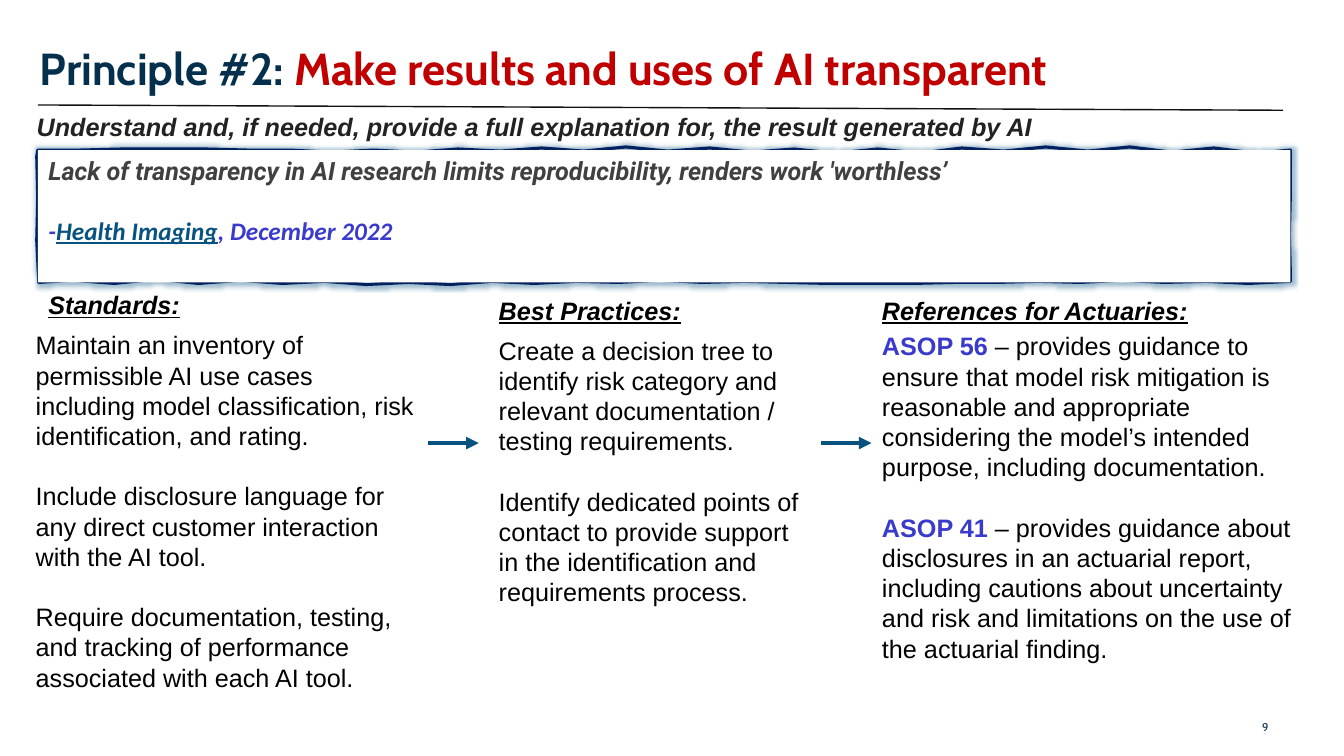
import math

import pptx
import pptx.dml.color
import pptx.enum.shapes
import pptx.enum.text
import pptx.oxml
import pptx.oxml.ns
import pptx.util

RGBColor = pptx.dml.color.RGBColor
ALIGN = pptx.enum.text.PP_ALIGN
ANCHOR = pptx.enum.text.MSO_ANCHOR

PX = 9525  # EMU in one px, 96 px to the inch
WHITE = RGBColor(0xFF, 0xFF, 0xFF)
BLACK = RGBColor(0, 0, 0)
NAVY = RGBColor(0x05, 0x30, 0x4D)
RED = RGBColor(0xC0, 0, 0)
RULE = RGBColor(0x12, 0x12, 0x12)
INK = RGBColor(0x22, 0x22, 0x22)
GREY = RGBColor(0x40, 0x40, 0x40)
FRAME = RGBColor(0x00, 0x20, 0x60)
TEAL = RGBColor(0x08, 0x52, 0x80)
VIOLET = RGBColor(0x3A, 0x3A, 0xCC)
NS = pptx.oxml.ns.nsdecls("a")


def add_run(p, text, size=18, font="Arial", color=BLACK, bold=False,
            italic=False, underline=False):
    r = p.add_run()
    r.text = text
    r.font.size = pptx.util.Pt(size)
    r.font.name = font
    r.font.color.rgb = color
    r.font.bold, r.font.italic, r.font.underline = bold, italic, underline


def fill_frame(tf, paragraphs, align=ALIGN.LEFT, anchor=ANCHOR.TOP, inset=(10, 5),
               wrap=True, gap=0, spacing=None):
    """Each paragraph is a list of (text, format) runs."""
    tf.word_wrap = wrap
    tf.vertical_anchor = anchor
    tf.margin_left = tf.margin_right = inset[0] * PX
    tf.margin_top = tf.margin_bottom = inset[1] * PX
    for i, runs in enumerate(paragraphs):
        p = tf.paragraphs[0] if i == 0 else tf.add_paragraph()
        p.alignment = align
        if i and gap:
            p.space_before = pptx.util.Pt(gap)
        if spacing:
            p.line_spacing = spacing
        for text, fmt in runs:
            add_run(p, text, **fmt)


def add_text(slide, box, paragraphs, **layout):
    sp = slide.shapes.add_textbox(*(v * PX for v in box))
    fill_frame(sp.text_frame, paragraphs, **layout)


def add_line(slide, x1, y1, x2, y2, color, width, arrow=False):
    ln = slide.shapes.add_connector(
        pptx.enum.shapes.MSO_CONNECTOR.STRAIGHT, x1 * PX, y1 * PX, x2 * PX, y2 * PX)
    ln.line.color.rgb = color
    ln.line.width = pptx.util.Pt(width)
    if arrow:
        ln.line._get_or_add_ln().append(
            pptx.oxml.parse_xml(f'<a:tailEnd {NS} type="triangle"/>'))
    ln._element.spPr.append(pptx.oxml.parse_xml(f"<a:effectLst {NS}/>"))


def add_wavy_edge(slide, box):
    """Rectangle with hand-drawn edges, walked clockwise in even steps."""
    x, y, w, h = box
    step = 40

    def wave(t):
        return 2 * math.sin(t / 13) + math.sin(t / 7)

    across, down = range(0, w, step), range(0, h, step)
    points = [(x + t, y + wave(t)) for t in across]
    points += [(x + w + wave(t) / 2, y + t) for t in down]
    points += [(x + w - t, y + h + wave(t + 50)) for t in across]
    points += [(x + wave(t + 90) / 2, y + h - t) for t in down]
    fb = slide.shapes.build_freeform(*points[0], scale=PX)
    fb.add_line_segments(points[1:], close=True)
    sp = fb.convert_to_shape()
    sp.shadow.inherit = False
    return sp


def add_header(slide, box):
    x, y, w, h = box
    title = dict(size=32, font="Cabin", bold=True)
    add_text(slide, (x + 2, y, w, 42),
             [[("Principle #2: ", dict(title, color=NAVY)),
               ("Make results and uses of AI transparent", dict(title, color=RED))]],
             inset=(0, 0), spacing=0.8)
    add_line(slide, x, y + 51, x + 1186, y + 56, RULE, 1)
    add_text(slide, (x - 11, y + 52, 977, 38),
             [[("Understand and, if needed, provide a full explanation for, "
                "the result generated by AI",
                dict(color=INK, bold=True, italic=True))]], wrap=False)


def add_quote(slide, box):
    # Stroke with a soft glow
    edge = add_wavy_edge(slide, box)
    edge.fill.background()
    edge.line.color.rgb = FRAME
    edge.line.width = pptx.util.Pt(2.25)
    edge._element.spPr.find(pptx.oxml.ns.qn("a:effectLst")).append(pptx.oxml.parse_xml(
        f'<a:glow {NS} rad="63500"><a:srgbClr val="{TEAL}">'
        '<a:alpha val="40000"/></a:srgbClr></a:glow>'))

    # White paper that holds the text
    paper = slide.shapes.add_shape(
        pptx.enum.shapes.MSO_SHAPE.RECTANGLE, *(v * PX for v in box))
    paper.shadow.inherit = False
    paper.fill.solid()
    paper.fill.fore_color.rgb = WHITE
    paper.line.fill.background()
    bold = dict(bold=True, italic=True)
    source = dict(bold, font="Calibri", color=VIOLET)
    fill_frame(paper.text_frame, [
        [("Lack of transparency in AI research limits reproducibility, "
          "renders work 'worthless’", dict(bold, font="Roboto", color=GREY))],
        [("-", source),
         ("Health Imaging", dict(source, color=TEAL, underline=True)),
         (", December 2022", source)],
    ], gap=21)


def add_column(slide, box, heading, heading_offset, paragraphs):
    x, y, w, h = box
    dx, dy = heading_offset
    add_text(slide, (x + dx, y + dy, w - dx, 38),
             [[(heading, dict(bold=True, italic=True, underline=True))]])
    add_text(slide, box, paragraphs, gap=21.5)


def build_slide(prs):
    slide = prs.slides.add_slide(prs.slide_layouts[6])
    add_header(slide, (36, 49, 1125, 90))
    add_quote(slide, (36, 143, 1193, 126))

    # Three columns
    add_column(slide, (24, 309, 384, 359), "Standards:", (12, -38), [
        [("Maintain an inventory of permissible AI use cases including model "
          "classification, risk identification, and rating.", {})],
        [("Include disclosure language for any direct customer interaction "
          "with the AI tool.", {})],
        [("Require documentation, testing, and tracking of performance "
          "associated with each AI tool.", {})]])
    add_column(slide, (465, 314, 319, 272), "Best Practices:", (0, -38), [
        [("Create a decision tree to identify risk category and relevant "
          "documentation / testing requirements.", {})],
        [("Identify dedicated points of contact to provide support in the "
          "identification and requirements process.", {})]])
    asop = dict(color=VIOLET, bold=True)
    add_column(slide, (830, 310, 417, 329), "References for Actuaries:", (0, -34), [
        [("ASOP 56 ", asop),
         ("– provides guidance to ensure that model risk mitigation is reasonable "
          "and appropriate considering the model’s intended purpose, including "
          "documentation.", {})],
        [("ASOP 41 ", asop),
         ("– provides guidance about disclosures in an actuarial report, including "
          "cautions about uncertainty and risk and limitations on the use of the "
          "actuarial finding.", {})]])

    # Arrows between the columns
    for x in (408, 782):
        add_line(slide, x, 422, x + 48, 422, TEAL, 3, arrow=True)

    # Page number
    add_text(slide, (1175, 686, 33, 13),
             [[("9", dict(size=8, font="Cabin", color=NAVY))]],
             align=ALIGN.RIGHT, anchor=ANCHOR.MIDDLE, inset=(0, 0))


def main():
    prs = pptx.Presentation()
    prs.slide_width, prs.slide_height = 1280 * PX, 720 * PX
    build_slide(prs)
    prs.save("out.pptx")


if __name__ == "__main__":
    main()
